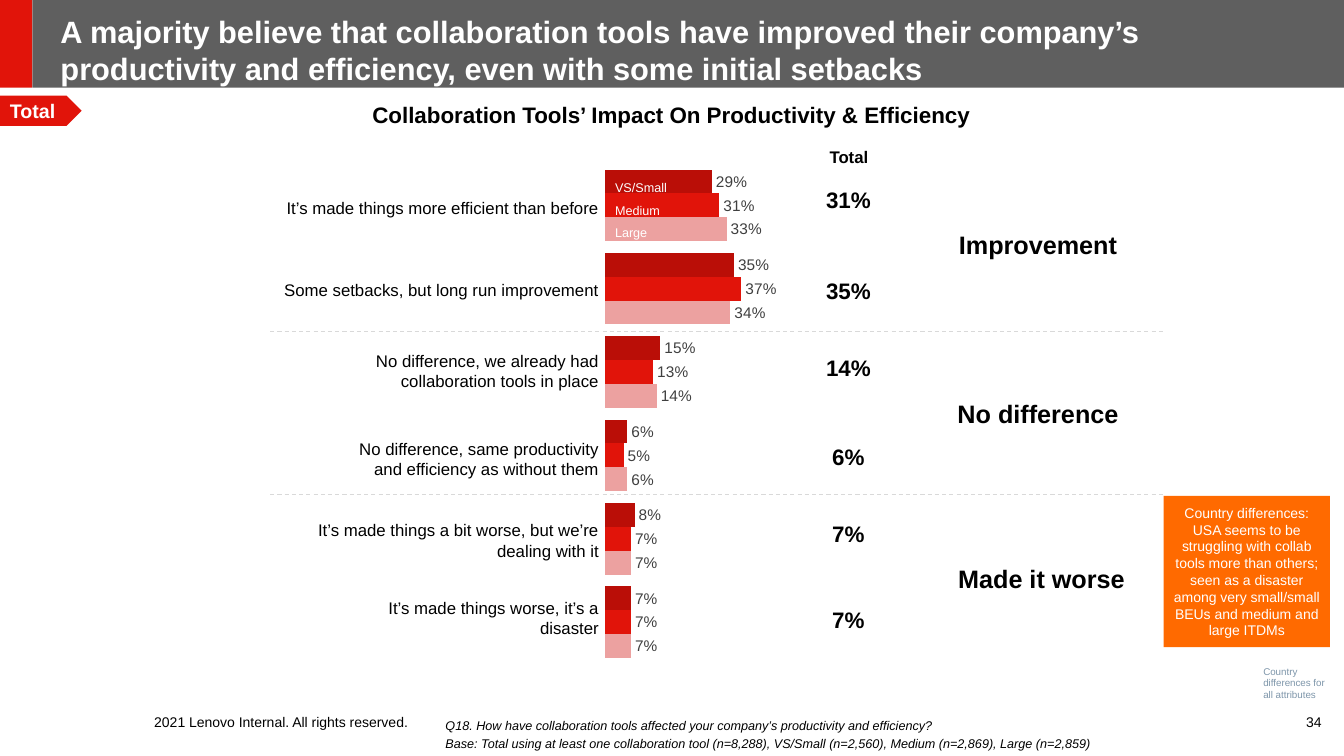
from lxml import etree
from pptx import Presentation
from pptx.chart.data import CategoryChartData
from pptx.dml.color import RGBColor
from pptx.enum.chart import XL_CHART_TYPE, XL_LABEL_POSITION
from pptx.enum.dml import MSO_LINE
from pptx.enum.shapes import MSO_CONNECTOR, MSO_SHAPE
from pptx.enum.text import MSO_ANCHOR, PP_ALIGN
from pptx.oxml.ns import qn
from pptx.util import Inches, Pt

BLACK = RGBColor(0x00, 0x00, 0x00)
WHITE = RGBColor(0xFF, 0xFF, 0xFF)
HEADER_GREY = RGBColor(0x5F, 0x5F, 0x5F)
RED = RGBColor(0xE1, 0x14, 0x0A)
DARK_RED = RGBColor(0xBA, 0x0E, 0x07)
PINK = RGBColor(0xEC, 0xA1, 0xA0)
LABEL_GREY = RGBColor(0x40, 0x40, 0x40)
DIVIDER_GREY = RGBColor(0xD9, 0xD9, 0xD9)
NOTE_BLUE = RGBColor(0x7E, 0x96, 0xAA)
ORANGE = RGBColor(0xFF, 0x6A, 0x00)

NO_INSETS = (0, 0, 0, 0)
TIGHT = (0.02, 0.05, 0.02, 0.05)
NORMAL = (0.1, 0.05, 0.1, 0.05)

SIZES = [
    ("VS/Small", DARK_RED, (0.29, 0.35, 0.15, 0.06, 0.08, 0.07)),
    ("Medium", RED, (0.31, 0.37, 0.13, 0.05, 0.07, 0.07)),
    ("Large", PINK, (0.33, 0.34, 0.14, 0.06, 0.07, 0.07)),
]
# answer, label width, label middle, total, top of total
ANSWERS = [
    ("It’s made things more efficient than before", 3.71, 2.06, "31%", 1.8),
    ("Some setbacks, but long run improvement", 3.27, 2.87, "35%", 2.7),
    ("No difference, we already had collaboration tools in place", 2.88, 3.68, "14%", 3.46),
    ("No difference, same productivity and efficiency as without them", 2.71, 4.55, "6%", 4.35),
    ("It’s made things a bit worse, but we’re dealing with it", 2.93, 5.36, "7%", 5.11),
    ("It’s made things worse, it’s a disaster", 2.7, 6.13, "7%", 5.96),
]
# outcome, left, top, width
OUTCOMES = [
    ("Improvement", 9.45, 2.16, 1.69),
    ("No difference", 9.45, 3.84, 1.69),
    ("Made it worse", 9.36, 5.48, 1.94),
]


def write(shape, lines, size, color=BLACK, bold=False, italic=False,
          align=PP_ALIGN.LEFT, anchor=MSO_ANCHOR.MIDDLE, insets=NORMAL):
    frame = shape.text_frame
    frame.word_wrap = True
    frame.vertical_anchor = anchor
    (frame.margin_left, frame.margin_top,
     frame.margin_right, frame.margin_bottom) = map(Inches, insets)
    for i, line in enumerate(lines):
        paragraph = frame.add_paragraph() if i else frame.paragraphs[0]
        paragraph.alignment = align
        if i:
            paragraph.space_before = Pt(0.2 * size)
        run = paragraph.add_run()
        run.text = line
        font = run.font
        font.name, font.size = "Arial", Pt(size)
        font.bold, font.italic = bold, italic
        font.color.rgb = color


def add_text(slide, box, text, size, **style):
    write(slide.shapes.add_textbox(*map(Inches, box)), text.split("\n"), size, **style)


def add_block(slide, kind, box, color):
    block = slide.shapes.add_shape(kind, *map(Inches, box))
    block.shadow.inherit = False
    block.fill.solid()
    block.fill.fore_color.rgb = color
    block.line.fill.background()
    return block


def add_header(slide, left, top, width, height):
    accent = 0.32
    add_block(slide, MSO_SHAPE.RECTANGLE,
              (left + accent, top, width - accent, height), HEADER_GREY)
    add_block(slide, MSO_SHAPE.RECTANGLE, (left, top, accent, height), RED)
    title = slide.shapes.title
    title.left, title.top = Inches(left + 0.6), Inches(top + 0.18)
    title.width, title.height = Inches(width - 0.9), Inches(0.62)
    write(title, ["A majority believe that collaboration tools have improved their "
                  "company’s productivity and efficiency, even with some initial setbacks"],
          22, WHITE, bold=True, insets=NO_INSETS)
    # Bring the title in front of its band
    slide.shapes._spTree.append(title._element)


def add_headings(slide, left, top):
    tag = add_block(slide, MSO_SHAPE.PENTAGON, (left, top, 0.81, 0.3), RED)
    write(tag, ["Total"], 14, WHITE, bold=True)
    add_text(slide, (left + 3.03, top, 7.26, 0.37),
             "Collaboration Tools’ Impact On Productivity & Efficiency", 16,
             bold=True, align=PP_ALIGN.CENTER, anchor=MSO_ANCHOR.TOP)


def add_impact_chart(slide, left, top, width, height):
    data = CategoryChartData(number_format="0%")
    data.categories = [str(i + 1) for i in range(len(ANSWERS))]
    for name, _, shares in SIZES:
        data.add_series(name, shares)
    chart = slide.shapes.add_chart(
        XL_CHART_TYPE.BAR_CLUSTERED, *map(Inches, (left, top, width, height)), data).chart
    chart.has_legend = chart.has_title = False
    chart.font.name, chart.font.size = "Arial", Pt(10)
    chart.font.color.rgb = BLACK
    chart.category_axis.reverse_order = True
    shares_axis = chart.value_axis
    shares_axis.minimum_scale, shares_axis.maximum_scale = 0, 1.1
    shares_axis.has_major_gridlines = False
    chart.category_axis.visible = shares_axis.visible = False
    bars = chart.plots[0]
    bars.gap_width, bars.overlap, bars.vary_by_categories = 50, 0, False
    for series, (_, color, _) in zip(bars.series, SIZES):
        series.format.fill.solid()
        series.format.fill.fore_color.rgb = color
        labels = series.data_labels
        labels.show_value = True
        labels.position = XL_LABEL_POSITION.OUTSIDE_END
        labels.number_format, labels.number_format_is_linked = "0%", False
        labels.font.name, labels.font.size = "Arial", Pt(11)
        labels.font.color.rgb = LABEL_GREY
    # Size names on the first three bars
    for i, (name, _, _) in enumerate(SIZES):
        add_text(slide, (left + 0.16, top + 0.16 + 0.225 * i, 1.02, 0.36),
                 name, 9, color=WHITE, insets=TIGHT)


def add_answers(slide, label_right, totals_left):
    add_text(slide, (totals_left - 0.12, 1.41, 1.08, 0.3), "Total", 12,
             bold=True, align=PP_ALIGN.CENTER, anchor=MSO_ANCHOR.TOP)
    label_height = 0.52
    for answer, width, middle, total, total_top in ANSWERS:
        add_text(slide, (label_right - width, middle - label_height / 2, width, label_height),
                 answer, 12, align=PP_ALIGN.RIGHT, insets=TIGHT)
        add_text(slide, (totals_left, total_top, 0.83, 0.37), total, 16,
                 bold=True, align=PP_ALIGN.CENTER, anchor=MSO_ANCHOR.TOP)


def add_outcomes(slide, left, right):
    for y in (3.29, 4.91):
        divider = slide.shapes.add_connector(
            MSO_CONNECTOR.STRAIGHT, *map(Inches, (left, y, right, y)))
        divider.line.color.rgb = DIVIDER_GREY
        divider.line.width = Pt(0.75)
        divider.line.dash_style = MSO_LINE.DASH
        etree.SubElement(divider._element.spPr, qn("a:effectLst"))
    for outcome, x, y, width in OUTCOMES:
        add_text(slide, (x, y, width, 0.52), outcome, 18,
                 bold=True, align=PP_ALIGN.CENTER, insets=TIGHT)


def add_country_notes(slide, left, top, width, height):
    callout = add_block(slide, MSO_SHAPE.RECTANGLE, (left, top, width, height), ORANGE)
    write(callout, ["Country differences: USA seems to be struggling with collab tools more "
                    "than others; seen as a disaster among very small/small BEUs and medium "
                    "and large ITDMs"], 10, WHITE, align=PP_ALIGN.CENTER)
    add_text(slide, (left + 0.97, top + height + 0.19, 0.77, 0.33),
             "Country differences for all attributes", 7, color=NOTE_BLUE, insets=TIGHT)


def add_footer(slide, top):
    add_text(slide, (1.53, top + 0.2, 2.64, 0.17),
             "2021 Lenovo Internal. All rights reserved.", 10, insets=NO_INSETS)
    add_text(slide, (4.32, top, 7.39, 0.62),
             "Q18. How have collaboration tools affected your company’s productivity and "
             "efficiency?\nBase: Total using at least one collaboration tool (n=8,288), "
             "VS/Small (n=2,560), Medium (n=2,869), Large (n=2,859)",
             9, italic=True, anchor=MSO_ANCHOR.BOTTOM)
    add_text(slide, (12.79, top + 0.2, 0.48, 0.17), "34", 10,
             align=PP_ALIGN.CENTER, insets=NO_INSETS)


def main():
    deck = Presentation()
    deck.slide_width, deck.slide_height = Inches(13.33), Inches(7.5)
    slide = deck.slides.add_slide(deck.slide_layouts[5])
    add_header(slide, 0, 0, 13.33, 0.87)
    add_headings(slide, 0, 0.95)
    add_impact_chart(slide, 5.92, 1.52, 4.18, 5.17)
    add_answers(slide, 5.96, 8)
    add_outcomes(slide, 2.68, 11.54)
    add_country_notes(slide, 11.54, 4.92, 1.65, 1.5)
    add_footer(slide, 6.88)
    deck.save("out.pptx")


if __name__ == "__main__":
    main()
